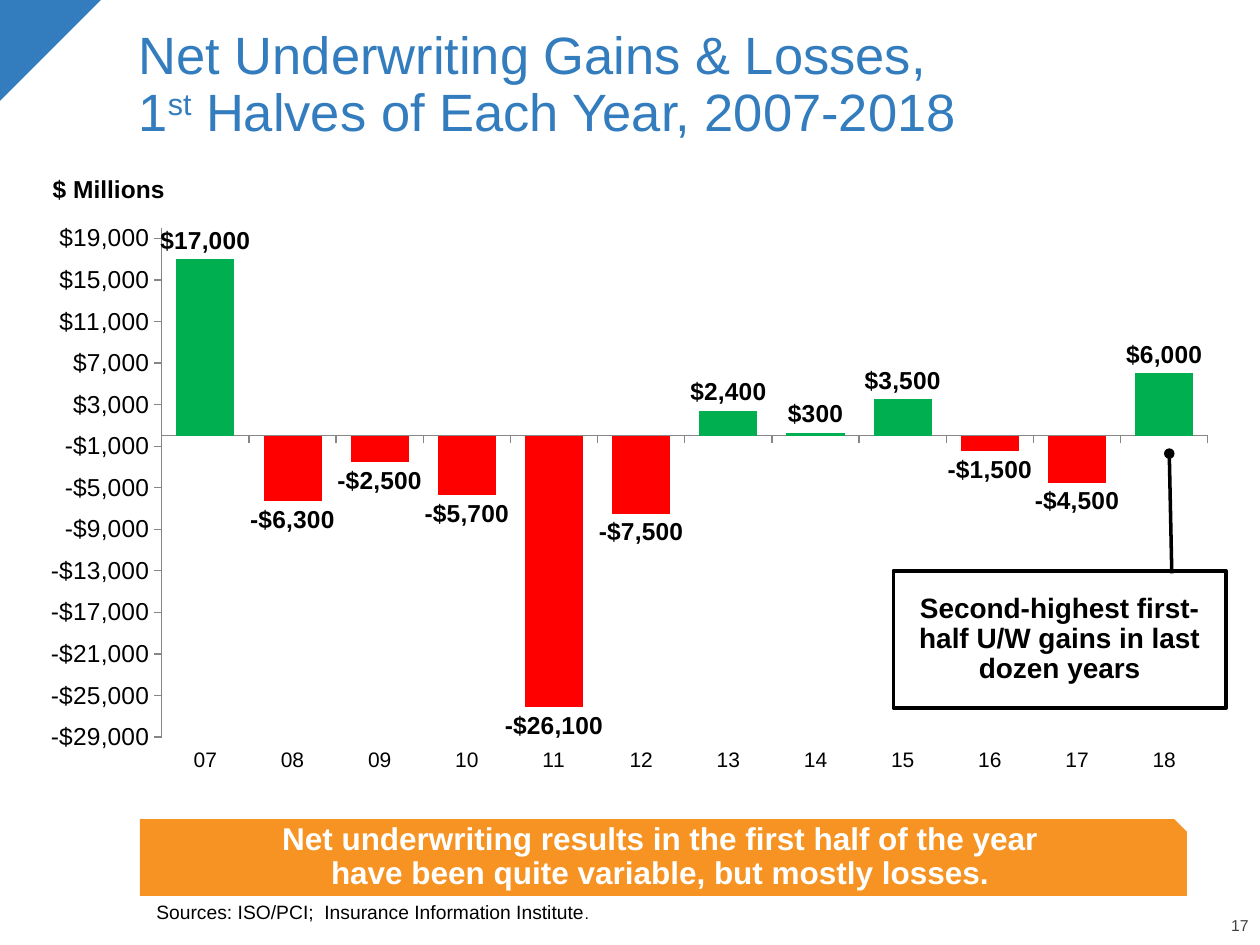
from pptx import Presentation
from pptx.chart.data import CategoryChartData
from pptx.dml.color import RGBColor
from pptx.enum.chart import XL_CHART_TYPE, XL_LABEL_POSITION, XL_TICK_LABEL_POSITION, XL_TICK_MARK
from pptx.enum.shapes import MSO_CONNECTOR, MSO_SHAPE
from pptx.enum.text import MSO_ANCHOR, MSO_AUTO_SIZE, PP_ALIGN
from pptx.oxml import parse_xml
from pptx.oxml.ns import nsdecls
from pptx.oxml.xmlchemy import OxmlElement
from pptx.util import Inches, Pt

COLUMNS = XL_CHART_TYPE.COLUMN_CLUSTERED
OUTSIDE_END = XL_LABEL_POSITION.OUTSIDE_END
LOW = XL_TICK_LABEL_POSITION.LOW
TICK_OUT, TICK_NONE = XL_TICK_MARK.OUTSIDE, XL_TICK_MARK.NONE
STRAIGHT = MSO_CONNECTOR.STRAIGHT
TRIANGLE, SNIPPED, RECTANGLE = MSO_SHAPE.RIGHT_TRIANGLE, MSO_SHAPE.SNIP_1_RECTANGLE, MSO_SHAPE.RECTANGLE
MIDDLE, BOTTOM = MSO_ANCHOR.MIDDLE, MSO_ANCHOR.BOTTOM
LEFT, CENTER, RIGHT = PP_ALIGN.LEFT, PP_ALIGN.CENTER, PP_ALIGN.RIGHT
NO_FIT = MSO_AUTO_SIZE.NONE

FONT = "Arial"
BLUE, ORANGE, GREEN, RED = "337DBE", "F69322", "00B050", "FF0000"
BLACK, WHITE, GRAY, AXIS_GRAY = "000000", "FFFFFF", "404040", "868686"
DOLLARS = '"$"#,##0'
GAINS = {
    "07": 17000, "08": -6300, "09": -2500, "10": -5700, "11": -26100, "12": -7500,
    "13": 2400, "14": 300, "15": 3500, "16": -1500, "17": -4500, "18": 6000,
}


def color(value):
    """Turn a hex string into a colour."""
    return RGBColor.from_string(value)


def style_font(font, size, tint, bold=False):
    """Set the typeface, size, colour and weight of a font."""
    font.name, font.size, font.bold = FONT, Pt(size), bold
    font.color.rgb = color(tint)


def place(shape, box):
    """Move a shape to a box given in inches."""
    shape.left, shape.top, shape.width, shape.height = map(Inches, box)


def set_frame(frame, anchor, insets=(0.1, 0.05, 0.1, 0.05)):
    """Set wrapping, anchor and insets of a text frame."""
    frame.word_wrap, frame.auto_size, frame.vertical_anchor = True, NO_FIT, anchor
    frame.margin_left, frame.margin_top, frame.margin_right, frame.margin_bottom = map(Inches, insets)


def write(frame, text, size, tint, bold=False, align=LEFT):
    """Fill a text frame with one formatted paragraph."""
    frame.text = text
    para = frame.paragraphs[0]
    para.alignment, para.line_spacing, para.space_before = align, 0.9, Pt(0)
    for span in para.runs:
        style_font(span.font, size, tint, bold)
    return para


def add_label(page, box, text, size, tint, anchor, align=LEFT, bold=False, insets=(0.1, 0.05, 0.1, 0.05)):
    """Add a text box with one formatted paragraph."""
    frame = page.shapes.add_textbox(*map(Inches, box)).text_frame
    set_frame(frame, anchor, insets)
    write(frame, text, size, tint, bold, align)


def add_block(shapes, kind, box, fill=None, line=None):
    """Add a flat preset shape with an optional fill and outline."""
    block = shapes.add_shape(kind, *map(Inches, box))
    block.shadow.inherit = False
    if fill:
        block.fill.solid()
        block.fill.fore_color.rgb = color(fill)
    else:
        block.fill.background()
    if line:
        block.line.color.rgb = color(line)
        block.line.width = Pt(2)
    else:
        block.line.fill.background()
    return block


def add_title(page, box):
    """Fill the title placeholder, raising the ordinal suffix."""
    title = page.shapes.title
    place(title, box)
    set_frame(title.text_frame, MIDDLE)
    para = write(title.text_frame, "Net Underwriting Gains & Losses,\v1", 30, BLUE)
    for text in ("st", " Halves of Each Year, 2007-2018"):
        span = para.add_run()
        span.text = text
        style_font(span.font, 30, BLUE)
        if text == "st":
            span.font._element.set("baseline", "30000")


def add_sources(page, box):
    """Fill the body placeholder with the source line."""
    body = page.placeholders[1]
    place(body, box)
    set_frame(body.text_frame, BOTTOM, (0, 0, 0, 0))
    para = write(body.text_frame, "Sources: ISO/PCI;  Insurance Information Institute", 11, BLACK)
    properties = para._p.get_or_add_pPr()
    properties.set("marL", "0")
    properties.set("indent", "0")
    properties.append(OxmlElement("a:buNone"))
    stop = para.add_run()
    stop.text = "."
    style_font(stop.font, 9, BLACK)


def style_axis(axis, size):
    """Format the line, ticks and labels of an axis."""
    axis.has_major_gridlines = False
    axis.major_tick_mark, axis.minor_tick_mark = TICK_OUT, TICK_NONE
    axis.format.line.color.rgb = color(AXIS_GRAY)
    style_font(axis.tick_labels.font, size, BLACK)


def set_plot_area(chart, box):
    """Fix the inner plot area as fractions of the chart."""
    values = "".join(f'<c:{name} val="{value}"/>' for name, value in zip("xywh", box))
    layout = parse_xml(
        f'<c:layout {nsdecls("c")}><c:manualLayout><c:layoutTarget val="inner"/>'
        f'<c:xMode val="edge"/><c:yMode val="edge"/>{values}</c:manualLayout></c:layout>'
    )
    area = chart._chartSpace.chart.plotArea
    for old in area.findall(layout.tag):
        area.remove(old)
    area.insert(0, layout)


def add_gains_chart(page, box):
    """Add the column chart with green gains and red losses."""
    data = CategoryChartData(number_format=DOLLARS)
    data.categories = list(GAINS)
    data.add_series("Series 1", GAINS.values())
    chart = page.shapes.add_chart(COLUMNS, *map(Inches, box), data).chart
    chart.has_legend = chart.has_title = False
    style_font(chart.font, 12, BLACK)
    style_axis(chart.category_axis, 12)
    chart.category_axis.tick_label_position = LOW
    scale = chart.value_axis
    style_axis(scale, 14)
    scale.minimum_scale, scale.maximum_scale, scale.major_unit = -29000, 20000, 4000
    scale.tick_labels.number_format, scale.tick_labels.number_format_is_linked = DOLLARS, False

    plot = chart.plots[0]
    plot.gap_width, plot.vary_by_categories, plot.has_data_labels = 50, False, True
    labels = plot.data_labels
    labels.show_value, labels.position = True, OUTSIDE_END
    labels.number_format, labels.number_format_is_linked = DOLLARS, False
    style_font(labels.font, 14, BLACK, True)
    series = plot.series[0]
    series.invert_if_negative = False
    series.format.fill.solid()
    series.format.fill.fore_color.rgb = color(GREEN)
    for index, gain in enumerate(GAINS.values()):
        if gain < 0:
            fill = series.points[index].format.fill
            fill.solid()
            fill.fore_color.rgb = color(RED)
    set_plot_area(chart, (0.103, 0.028, 0.887, 0.867))


def add_banner(page, box):
    """Add the orange takeaway banner."""
    banner = add_block(page.shapes, SNIPPED, box, ORANGE)
    set_frame(banner.text_frame, MIDDLE, (0.1, 0.05, 0.1, 0.1))
    text = "Net underwriting results in the first half of the year\vhave been quite variable, but mostly losses."
    write(banner.text_frame, text, 18, WHITE, True, CENTER)


def add_callout(page, box, start, end):
    """Add the outlined note and its pointer as one group."""
    group = page.shapes.add_group_shape()
    note = add_block(group.shapes, RECTANGLE, box, line=BLACK)
    set_frame(note.text_frame, MIDDLE)
    write(note.text_frame, "Second-highest first-half U/W gains in last dozen years", 16, BLACK, True, CENTER)
    pointer = group.shapes.add_connector(STRAIGHT, *map(Inches, start + end))
    pointer.line.color.rgb = color(BLACK)
    pointer.line.width = Pt(2)
    tail = OxmlElement("a:tailEnd")
    tail.set("type", "oval")
    pointer.line._get_or_add_ln().append(tail)
    pointer._element.spPr.append(OxmlElement("a:effectLst"))


def main():
    """Build the slide and save the deck."""
    deck = Presentation()
    deck.slide_width, deck.slide_height = Inches(10), Inches(7.5)
    page = deck.slides.add_slide(deck.slide_layouts[1])
    add_block(page.shapes, TRIANGLE, (0, 0, 0.8, 0.8), BLUE).rotation = 90
    add_label(page, (9.43, 7.29, 0.48, 0.13), "17", 9, GRAY, BOTTOM, RIGHT, insets=(0, 0, 0, 0))
    add_title(page, (1, 0.19, 8.26, 0.98))
    add_sources(page, (1.24, 6.88, 8.4, 0.45))
    add_gains_chart(page, (0.32, 1.68, 9.36, 4.66))
    add_banner(page, (1.11, 6.5, 8.31, 0.61))
    add_label(page, (0.32, 1.36, 1.15, 0.31), "$ Millions", 14, BLACK, MIDDLE, bold=True)
    add_callout(page, (7.09, 4.53, 2.64, 1.09), (9.3, 4.55), (9.28, 3.6))
    deck.save("out.pptx")


if __name__ == "__main__":
    main()
